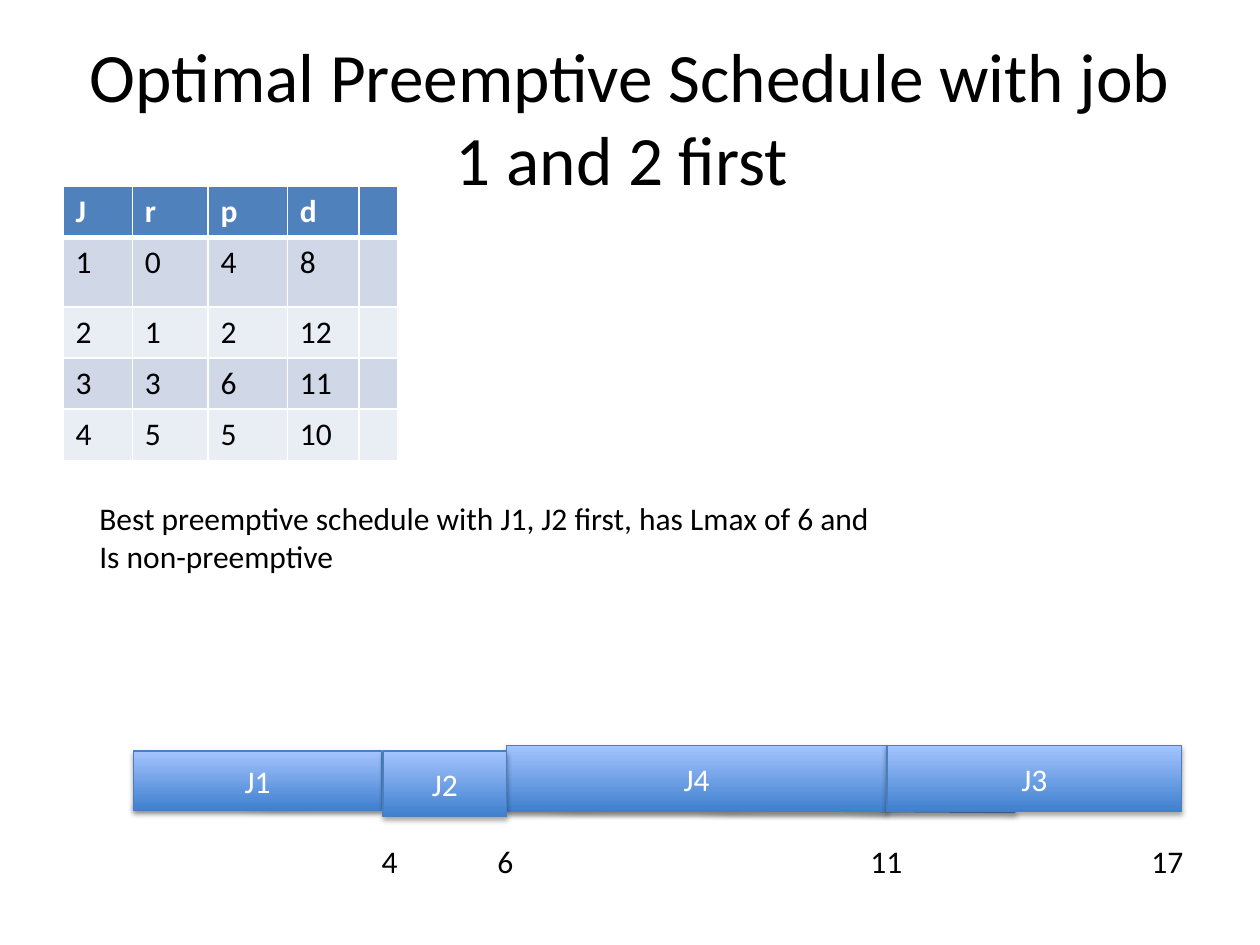
from lxml import etree
from pptx import Presentation
from pptx.dml.color import RGBColor
from pptx.enum.shapes import MSO_CONNECTOR as Connector, MSO_SHAPE as Shape
from pptx.enum.text import MSO_ANCHOR as Anchor, MSO_AUTO_SIZE as AutoSize, PP_ALIGN as Align
from pptx.oxml.ns import qn
from pptx.util import Pt

FONT = "Calibri"
BLACK, WHITE, BLUE = "000000", "FFFFFF", "4F81BD"
BANDS = ["D0D8E8", "E9EDF4"]
COLUMN_WIDTHS = [39.6, 43.2, 45.4, 41, 22.3]
ROW_HEIGHTS = [29.2, 39.6, 29.2, 29.2, 29.2]
JOB_TABLE = [
    ["J", "r", "p", "d", ""],
    ["1", "0", "4", "8", ""],
    ["2", "1", "2", "12", ""],
    ["3", "3", "6", "11", ""],
    ["4", "5", "5", "10", ""],
]
JOB_BARS = [
    ("J1", 76.3, 429.1, 141.8, 33.8),
    ("J4", 289.4, 426.2, 217.4, 37.4),
    ("J3", 506.9, 426.2, 168.5, 37.4),
    ("J2", 218.9, 429.1, 70.6, 37.4),
]
TIME_LABELS = [("4", 211, 33.1), ("11", 490.3, 33.1), ("6", 277.2, 23.8), ("17", 650.9, 33.1)]


def color(value):
    return RGBColor.from_string(value)


def add_run(paragraph, text, font_color=BLACK, size=18, bold=False):
    run = paragraph.add_run()
    run.text = text
    run.font.name = FONT
    run.font.size = Pt(size)
    run.font.bold = bold
    run.font.color.rgb = color(font_color)


def add_shadow(properties, distance, alpha):
    effects = properties.find(qn("a:effectLst"))
    if effects is None:
        effects = etree.SubElement(properties, qn("a:effectLst"))
    shadow = etree.SubElement(
        effects, qn("a:outerShdw"), blurRad=str(Pt(3.1)), dist=str(Pt(distance)),
        dir="5400000", rotWithShape="0",
    )
    shade = etree.SubElement(shadow, qn("a:srgbClr"), val=BLACK)
    etree.SubElement(shade, qn("a:alpha"), val=str(alpha * 1000))


def set_title(slide, text):
    title = slide.shapes.title
    title.left, title.top, title.width, title.height = Pt(36), Pt(21.6), Pt(648), Pt(90)
    frame = title.text_frame
    frame.auto_size = AutoSize.NONE
    frame.vertical_anchor = Anchor.MIDDLE
    frame.paragraphs[0].alignment = Align.CENTER
    add_run(frame.paragraphs[0], text, size=39.6)


def add_text(slide, lines, left, top, width, height):
    frame = slide.shapes.add_textbox(Pt(left), Pt(top), Pt(width), Pt(height)).text_frame
    frame.word_wrap = True
    frame.auto_size = AutoSize.SHAPE_TO_FIT_TEXT
    for index, line in enumerate(lines):
        paragraph = frame.add_paragraph() if index else frame.paragraphs[0]
        add_run(paragraph, line)


def set_borders(cell, widths):
    properties = cell._tc.get_or_add_tcPr()
    for index, (side, width) in enumerate(widths.items()):
        border = etree.Element(qn(f"a:ln{side}"), w=str(Pt(width)))
        fill = etree.SubElement(border, qn("a:solidFill"))
        etree.SubElement(fill, qn("a:srgbClr"), val=WHITE)
        properties.insert(index, border)


def add_job_table(slide):
    table = slide.shapes.add_table(
        len(ROW_HEIGHTS), len(COLUMN_WIDTHS), Pt(36), Pt(106.6),
        Pt(sum(COLUMN_WIDTHS)), Pt(sum(ROW_HEIGHTS)),
    ).table
    for column, width in zip(table.columns, COLUMN_WIDTHS):
        column.width = Pt(width)
    for row_index, values in enumerate(JOB_TABLE):
        header = row_index == 0
        row = table.rows[row_index]
        row.height = Pt(ROW_HEIGHTS[row_index])
        for cell, value in zip(row.cells, values):
            cell.fill.solid()
            cell.fill.fore_color.rgb = color(BLUE if header else BANDS[(row_index - 1) % 2])
            set_borders(cell, {"L": 1, "R": 1, "T": 3 if row_index == 1 else 1, "B": 3 if header else 1})
            if value:
                add_run(cell.text_frame.paragraphs[0], value, WHITE if header else BLACK, bold=header)


def add_timeline(slide):
    line = slide.shapes.add_connector(Connector.STRAIGHT, Pt(76.3), Pt(460.1), Pt(580.3), Pt(463.7))
    line.line.color.rgb = color(BLUE)
    line.line.width = Pt(2)
    add_shadow(line._element.spPr, 1.6, 38)


def add_job_bar(slide, name, left, top, width, height):
    shape = slide.shapes.add_shape(Shape.RECTANGLE, Pt(left), Pt(top), Pt(width), Pt(height))
    shape.fill.gradient()
    shape.fill.gradient_angle = 90
    for stop, position, value in zip(shape.fill.gradient_stops, (0, 1), ("3F80CE", "A4C4FF")):
        stop.position = position
        stop.color.rgb = color(value)
    shape.line.color.rgb = color("4B7EBC")
    shape.line.width = Pt(0.75)
    shape.shadow.inherit = False
    add_shadow(shape._element.spPr, 1.8, 35)
    frame = shape.text_frame
    frame.vertical_anchor = Anchor.MIDDLE
    frame.paragraphs[0].alignment = Align.CENTER
    add_run(frame.paragraphs[0], name, WHITE)


def main():
    presentation = Presentation()
    presentation.slide_width, presentation.slide_height = Pt(720), Pt(540)
    slide = presentation.slides.add_slide(presentation.slide_layouts[5])
    set_title(slide, "Optimal Preemptive Schedule with job 1 and 2 first ")
    add_job_table(slide)
    add_text(
        slide,
        ["Best preemptive schedule with J1, J2 first, has Lmax of 6 and", "Is non-preemptive"],
        49.7, 281.5, 460.1, 72.7,
    )
    add_timeline(slide)
    for bar in JOB_BARS:
        add_job_bar(slide, *bar)
    for time, left, width in TIME_LABELS:
        add_text(slide, [time], left, 477.4, width, 29.1)
    presentation.save("out.pptx")


if __name__ == "__main__":
    main()
